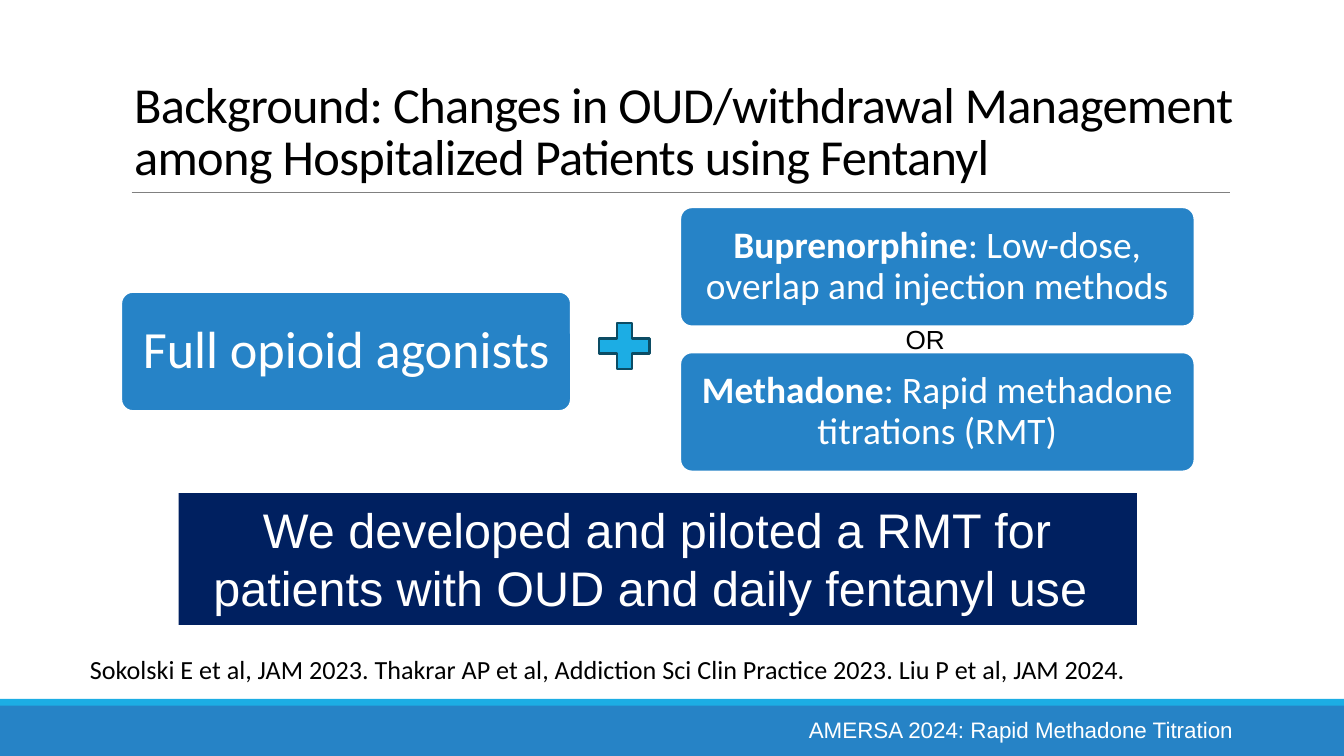
from pptx import Presentation
from pptx.dml.color import RGBColor
from pptx.enum.shapes import MSO_CONNECTOR, MSO_SHAPE
from pptx.enum.text import MSO_ANCHOR, PP_ALIGN
from pptx.util import Inches, Pt
from lxml.etree import SubElement
from pptx.oxml.ns import qn

COLORS = {
    "footer": "2683C6", "accent": "1CADE4", "rule": "808080", "card": "2683C7",
    "navy": "002060", "plus_line": "0C4C64", "white": "FFFFFF", "black": "000000",
}

TITLE = "Background: Changes in OUD/withdrawal Management among Hospitalized Patients using Fentanyl"
FOOTER = "AMERSA 2024: Rapid Methadone Titration"
SUMMARY = "We developed and piloted a RMT for patients with OUD and daily fentanyl use "
CITATIONS = ("Sokolski E et al, JAM 2023. Thakrar AP et al, Addiction Sci Clin Practice 2023. "
             "Liu P et al, JAM 2024.")

CARD_HEIGHT = 0.89
CARDS = [
    {"left": 0.9, "top": 2.17, "width": 3.35, "size": 28, "inset": 0.12,
     "runs": [("Full opioid agonists ", False)]},
    {"left": 5.06, "top": 1.54, "width": 3.83, "size": 20, "inset": 0.08,
     "runs": [("Buprenorphine", True), (": Low-dose, overlap and injection methods", False)]},
    {"left": 5.06, "top": 2.62, "width": 3.83, "size": 20, "inset": 0.08,
     "runs": [("Methadone", True), (": Rapid methadone titrations (RMT)", False)]},
]


def rgb(name):
    return RGBColor.from_string(COLORS[name])


def add_box(slide, kind, box, fill, line=None):
    sp = slide.shapes.add_shape(kind, *map(Inches, box))
    sp.shadow.inherit = False
    sp.fill.solid()
    sp.fill.fore_color.rgb = rgb(fill)
    if line:
        sp.line.color.rgb = rgb(line)
        sp.line.width = Pt(1.25)
    else:
        sp.line.fill.background()
    return sp


def write(sp, runs, size, font, color, align=PP_ALIGN.LEFT, anchor=MSO_ANCHOR.TOP, wrap=True):
    tf = sp.text_frame
    tf.word_wrap = wrap
    tf.vertical_anchor = anchor
    p = tf.paragraphs[0]
    p.alignment = align
    p.font.size = Pt(size)
    p.font.name = font
    p.font.color.rgb = rgb(color)
    for text, bold in runs:
        r = p.add_run()
        r.text = text
        r.font.bold = bold
    return p


def add_text(slide, box, text, size, font, color, **options):
    sp = slide.shapes.add_textbox(*map(Inches, box))
    return write(sp, [(text, False)], size, font, color, **options)


def add_card(slide, card):
    box = (card["left"], card["top"], card["width"], CARD_HEIGHT)
    sp = add_box(slide, MSO_SHAPE.ROUNDED_RECTANGLE, box, "card", "white")
    sp.adjustments[0] = 0.1
    tf = sp.text_frame
    tf.margin_left = tf.margin_right = Inches(card["inset"])
    tf.margin_top = tf.margin_bottom = Inches(card["inset"])
    p = write(sp, card["runs"], card["size"], "Calibri", "white",
              PP_ALIGN.CENTER, MSO_ANCHOR.MIDDLE)
    p.line_spacing = 0.9


def add_rule(slide):
    line = slide.shapes.add_connector(
        MSO_CONNECTOR.STRAIGHT, Inches(0.98), Inches(1.43), Inches(9.15), Inches(1.43))
    line.line.color.rgb = rgb("rule")
    line.line.width = Pt(0.5)
    SubElement(line._element.spPr, qn("a:effectLst"))


def main():
    prs = Presentation()
    prs.slide_width = Inches(10)
    prs.slide_height = prs.slide_width * 9 // 16
    slide = prs.slides.add_slide(prs.slide_layouts[6])

    add_box(slide, MSO_SHAPE.RECTANGLE, (0, 5.24, 10, 0.42), "footer")
    add_box(slide, MSO_SHAPE.RECTANGLE, (0, 5.2, 10, 0.05), "accent")
    add_rule(slide)
    add_text(slide, (5.92, 5.28, 4, 0.3), FOOTER, 12, "Arial", "white")

    title = add_text(slide, (0.9, 0.24, 8.49, 1.19), TITLE, 27, "Calibri", "black",
                     anchor=MSO_ANCHOR.BOTTOM)
    title.line_spacing = 0.85
    title.runs[0]._r.get_or_add_rPr().set("spc", "-38")

    for card in CARDS:
        add_card(slide, card)

    summary = add_box(slide, MSO_SHAPE.RECTANGLE, (1.33, 3.67, 7.13, 0.98), "navy")
    write(summary, [(SUMMARY, False)], 26, "Arial", "white", PP_ALIGN.CENTER)
    add_text(slide, (0.57, 4.81, 8.98, 0.34), CITATIONS, 14, "Calibri", "black")
    add_box(slide, MSO_SHAPE.MATH_PLUS, (4.39, 2.34, 0.51, 0.47), "accent", "plus_line")
    add_text(slide, (6.64, 2.36, 0.5, 0.34), "OR", 14, "Arial", "black", wrap=False)

    prs.save("out.pptx")


if __name__ == "__main__":
    main()
